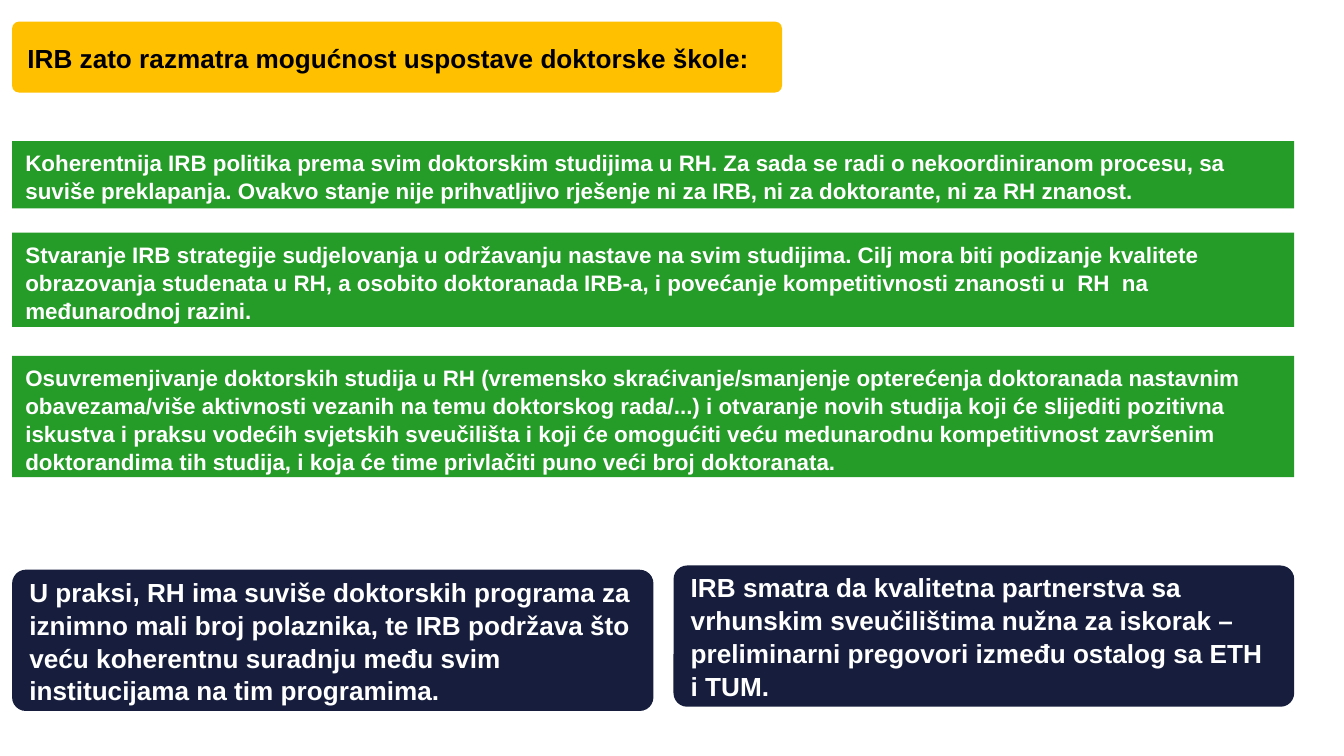
from dataclasses import dataclass

import pptx
import pptx.dml.color
import pptx.enum.shapes
import pptx.enum.text
import pptx.util

Cm = pptx.util.Cm
Shapes = pptx.enum.shapes.MSO_SHAPE
Anchor = pptx.enum.text.MSO_ANCHOR


@dataclass(frozen=True)
class Theme:
    """Colours, type sizes and spacing of the slide."""
    gold: str = "FFC000"
    green: str = "259B28"
    navy: str = "171E3D"
    black: str = "000000"
    white: str = "FFFFFF"
    font: str = "Arial"
    band_size: int = 12
    card_size: int = 14
    line_spacing: float = 1.05
    corner: float = 0.097


THEME = Theme()

TITLE = "IRB zato razmatra mogućnost uspostave doktorske škole:"

GOALS = [
    (2.67, 2, "Koherentnija IRB politika prema svim doktorskim studijima u RH. "
     "Za sada se radi o nekoordiniranom procesu, sa suviše preklapanja. "
     "Ovakvo stanje nije prihvatljivo rješenje ni za IRB, ni za doktorante, "
     "ni za RH znanost."),
    (4.4, 3, "Stvaranje IRB strategije sudjelovanja u održavanju nastave na svim "
     "studijima. Cilj mora biti podizanje kvalitete obrazovanja studenata u RH, "
     "a osobito doktoranada IRB-a, i povećanje kompetitivnosti znanosti "
     "u  RH  na međunarodnoj razini."),
    (6.73, 4, "Osuvremenjivanje doktorskih studija u RH (vremensko "
     "skraćivanje/smanjenje opterećenja doktoranada nastavnim obavezama/više "
     "aktivnosti vezanih na temu doktorskog rada/...) i otvaranje novih studija "
     "koji će slijediti pozitivna iskustva i praksu vodećih svjetskih sveučilišta "
     "i koji će omogućiti veću medunarodnu kompetitivnost završenim doktorandima "
     "tih studija, i koja će time privlačiti puno veći broj doktoranata."),
]

CONCLUSIONS = [
    ((0.23, 10.77, 12.12, 2.67),
     "U praksi, RH ima suviše doktorskih programa za iznimno mali broj polaznika, "
     "te IRB podržava što veću koherentnu suradnju među svim institucijama na tim "
     "programima."),
    ((12.73, 10.69, 11.73, 2.67),
     "IRB smatra da kvalitetna partnerstva sa vrhunskim sveučilištima nužna za "
     "iskorak – preliminarni pregovori između ostalog sa ETH i TUM."),
]


def rgb(value):
    """Turn a hex string into a colour."""
    return pptx.dml.color.RGBColor.from_string(value)


def write_text(shape, text, *, size, color, anchor):
    """Write one bold, left-aligned paragraph into a shape."""
    frame = shape.text_frame
    frame.word_wrap = True
    frame.vertical_anchor = anchor
    paragraph = frame.paragraphs[0]
    paragraph.alignment = pptx.enum.text.PP_ALIGN.LEFT
    paragraph.line_spacing = THEME.line_spacing
    run = paragraph.add_run()
    run.text = text
    run.font.name = THEME.font
    run.font.size = pptx.util.Pt(size)
    run.font.bold = True
    run.font.color.rgb = rgb(color)


def add_panel(slide, box, kind, fill):
    """Add a flat filled shape in a box given in centimetres."""
    shape = slide.shapes.add_shape(kind, *(Cm(length) for length in box))
    shape.shadow.inherit = False
    shape.fill.solid()
    shape.fill.fore_color.rgb = rgb(fill)
    shape.line.fill.background()
    return shape


def add_card(slide, box, text, *, fill, color):
    """Add a rounded card with vertically centred text."""
    card = add_panel(slide, box, Shapes.ROUNDED_RECTANGLE, fill)
    card.adjustments[0] = THEME.corner
    write_text(card, text, size=THEME.card_size, color=color, anchor=Anchor.MIDDLE)


def add_goal(slide, box, text):
    """Add a green band with one goal of the doctoral school."""
    band = add_panel(slide, box, Shapes.RECTANGLE, THEME.green)
    write_text(band, text, size=THEME.band_size, color=THEME.white, anchor=Anchor.TOP)


def main():
    """Build the slide and save it."""
    presentation = pptx.Presentation()
    presentation.slide_width = Cm(25.4)
    presentation.slide_height = Cm(14.29)
    slide = presentation.slides.add_slide(presentation.slide_layouts[6])

    left, width = 0.23, 24.23
    padding, line_height = 0.25, 0.51
    add_card(slide, (left, 0.41, 14.55, 1.34), TITLE,
             fill=THEME.gold, color=THEME.black)
    for top, lines, text in GOALS:
        add_goal(slide, (left, top, width, padding + lines * line_height), text)
    for box, text in CONCLUSIONS:
        add_card(slide, box, text, fill=THEME.navy, color=THEME.white)

    presentation.save("out.pptx")


if __name__ == "__main__":
    main()
